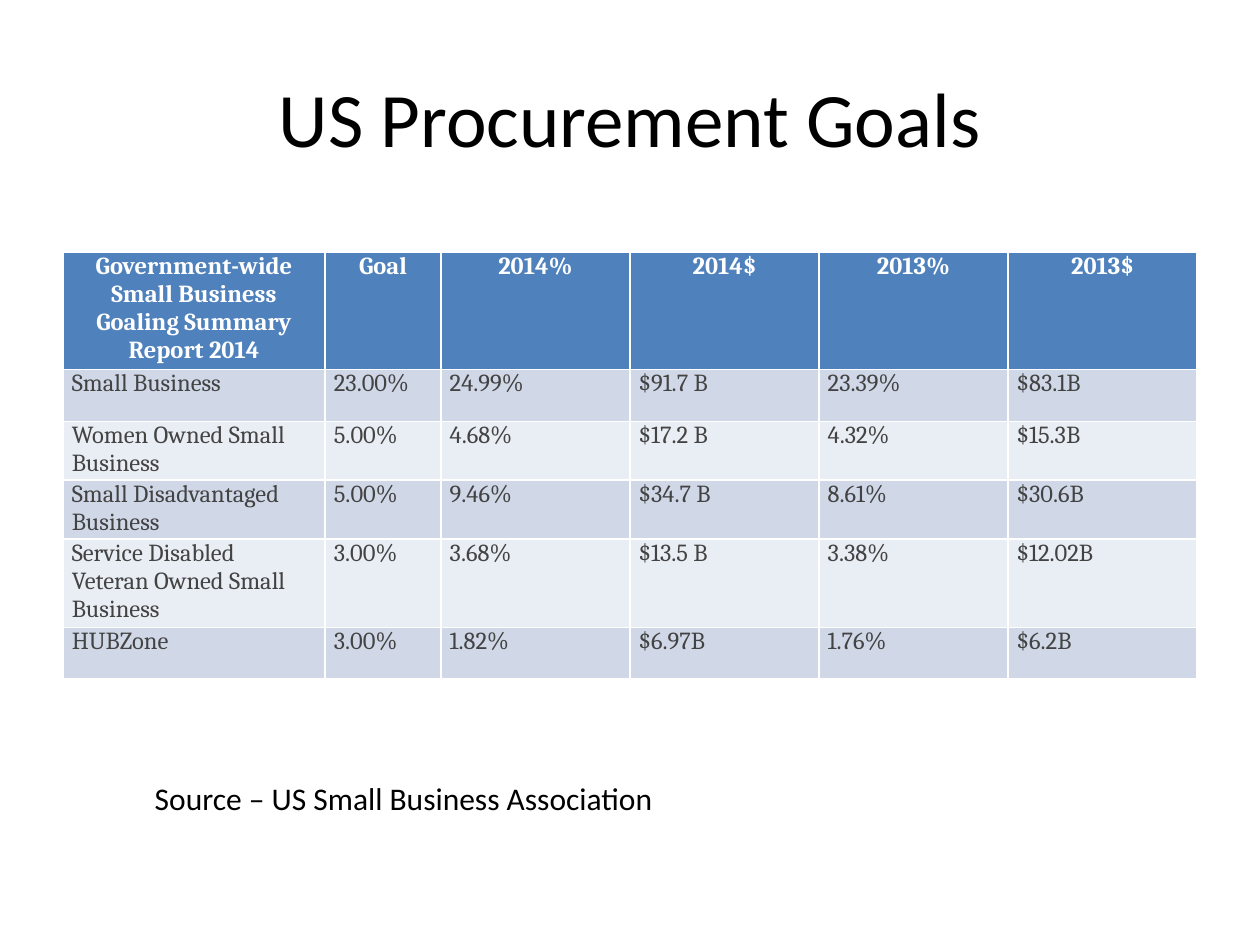
"""Build the US Procurement Goals slide with its table and source line."""
from pptx import Presentation
from pptx.dml.color import RGBColor
from pptx.enum.text import MSO_ANCHOR, PP_ALIGN
from pptx.util import Inches, Pt

LEFT, MID = PP_ALIGN.LEFT, PP_ALIGN.CENTER
TOP, CENTER = MSO_ANCHOR.TOP, MSO_ANCHOR.MIDDLE

HUES = {"ink": "000000", "text": "434343", "white": "FFFFFF",
        "head": "4F81BD", "dark": "D0D8E8", "light": "E9EDF4"}
TITLE = "US Procurement Goals"
SOURCE = "Source – US Small Business Association"
ROWS = [
    ("Government-wide Small Business Goaling Summary Report 2014",
     "Goal", "2014%", "2014$", "2013%", "2013$"),
    ("Small Business", "23.00%", "24.99%", "$91.7 B", "23.39%", "$83.1B"),
    ("Women Owned Small Business", "5.00%", "4.68%", "$17.2 B", "4.32%", "$15.3B"),
    ("Small Disadvantaged Business", "5.00%", "9.46%", "$34.7 B", "8.61%", "$30.6B"),
    ("Service Disabled Veteran Owned Small Business",
     "3.00%", "3.68%", "$13.5 B", "3.38%", "$12.02B"),
    ("HUBZone", "3.00%", "1.82%", "$6.97B", "1.76%", "$6.2B"),
]
WIDTHS = [2.08, 0.92, 1.5, 1.5, 1.5, 1.5]
HIGH = 0.41
PADS = {"margin_left": Inches(0.07), "margin_right": Inches(0.07),
        "margin_top": 0, "margin_bottom": 0}
FONTS = {
    "title": {"name": "Calibri", "size": Pt(44)},
    "source": {"name": "Calibri", "size": Pt(18)},
    "head": {"name": "Cambria", "size": Pt(14), "bold": True},
    "body": {"name": "Cambria", "size": Pt(14), "bold": False},
}


def color(hue):
    return RGBColor.from_string(HUES[hue])


def put(item, vals):
    for key, val in vals.items():
        setattr(item, key, val)


def write(frame, text, style, hue, align):
    para = frame.paragraphs[0]
    para.alignment = align
    run = para.add_run()
    run.text = text
    put(run.font, FONTS[style])
    run.font.color.rgb = color(hue)


def label(slide, area, text, style, align, anchor, wrap):
    frame = slide.shapes.add_textbox(*map(Inches, area)).text_frame
    put(frame, {"word_wrap": wrap, "vertical_anchor": anchor})
    write(frame, text, style, "ink", align)


def grid(slide):
    area = (0.5, 2, sum(WIDTHS), HIGH * len(ROWS))
    table = slide.shapes.add_table(
        len(ROWS), len(WIDTHS), *map(Inches, area)).table
    for col, wide in zip(table.columns, WIDTHS):
        col.width = Inches(wide)
    for r, row in enumerate(ROWS):
        table.rows[r].height = Inches(HIGH)
        if r == 0:
            fill, look = "head", ("head", "white", MID)
        else:
            fill, look = ("dark" if r % 2 else "light"), ("body", "text", LEFT)
        for c, text in enumerate(row):
            cell = table.cell(r, c)
            put(cell, PADS)
            cell.fill.solid()
            cell.fill.fore_color.rgb = color(fill)
            write(cell.text_frame, text, *look)


def main():
    deck = Presentation()
    put(deck, {"slide_width": Inches(10), "slide_height": Inches(7.5)})
    slide = deck.slides.add_slide(deck.slide_layouts[6])
    label(slide, (0.5, 0.3, 9, 1.25), TITLE, "title", MID, CENTER, True)
    grid(slide)
    label(slide, (1.13, 6.13, 4.2, 0.4), SOURCE, "source", LEFT, TOP, False)
    deck.save("out.pptx")


if __name__ == "__main__":
    main()
